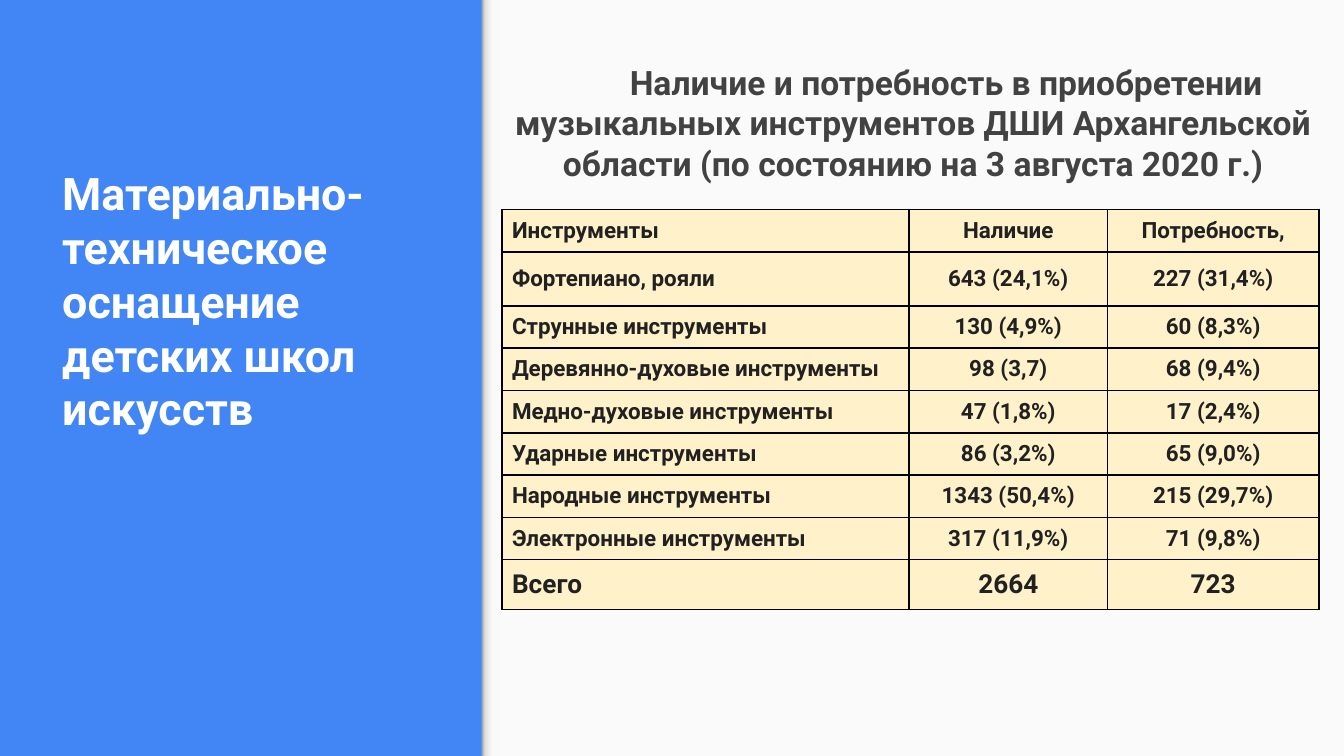
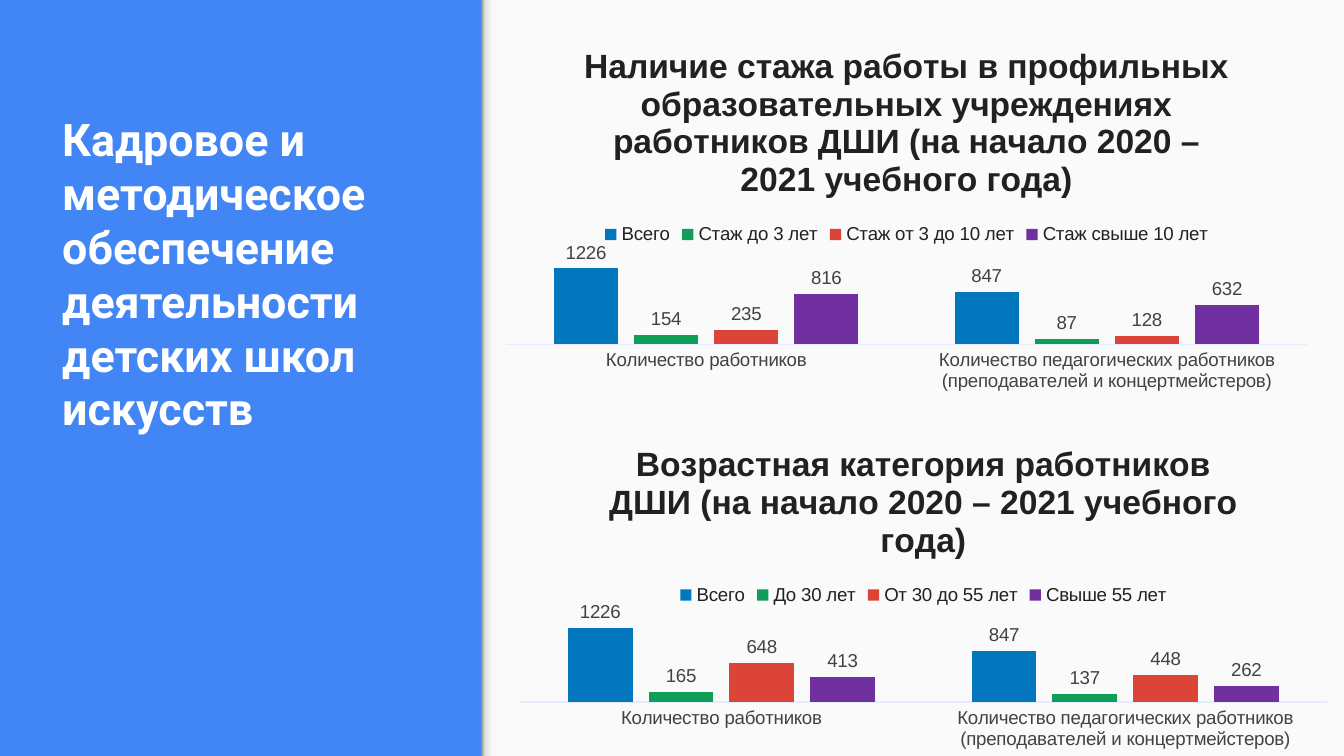
from lxml.etree import SubElement
from pptx import Presentation
from pptx.chart.data import CategoryChartData
from pptx.dml.color import RGBColor
from pptx.enum.chart import XL_CHART_TYPE, XL_LEGEND_POSITION, XL_TICK_MARK
from pptx.enum.shapes import MSO_SHAPE
from pptx.enum.text import MSO_ANCHOR, PP_ALIGN
from pptx.oxml.ns import qn
from pptx.util import Pt

PX = 4572  # EMU in one px, 200 px to the inch
SLIDE_W, SLIDE_H = 2000, 1125
PANEL_LEFT = 717

BLUE = RGBColor(0x42, 0x85, 0xF4)
PAPER = RGBColor(0xFA, 0xFA, 0xFA)
WHITE = RGBColor(0xFF, 0xFF, 0xFF)
BLACK = RGBColor(0x00, 0x00, 0x00)
INK = RGBColor(0x21, 0x21, 0x21)
GREY = RGBColor(0x42, 0x42, 0x42)
CREAM = RGBColor(0xFF, 0xF1, 0xCA)
AXIS = RGBColor(0xE3, 0xED, 0xFD)
SERIES_COLORS = [
    RGBColor(0x02, 0x77, 0xBD),
    RGBColor(0x0F, 0x9D, 0x58),
    RGBColor(0xDB, 0x44, 0x37),
    RGBColor(0x70, 0x30, 0xA0),
]
# Edge shadow, from the blue band into the panel: percent, colour
EDGE_STOPS = [
    (0, RGBColor(0x99, 0x99, 0x99)),
    (20, RGBColor(0xDE, 0xDE, 0xDE)),
    (64, RGBColor(0xF9, 0xF9, 0xF9)),
    (100, RGBColor(0xF9, 0xF9, 0xF9)),
]

# Content: instruments
EQUIPMENT_TITLE = "Материально-техническое оснащение детских школ искусств"
INSTRUMENTS_HEADING = (
    "Наличие и потребность в приобретении музыкальных инструментов ДШИ "
    "Архангельской области (по состоянию на 3 августа 2020 г.)"
)
INSTRUMENTS = [
    ("Инструменты", "Наличие", "Потребность,"),
    ("Фортепиано, рояли", "643 (24,1%)", "227 (31,4%)"),
    ("Струнные инструменты", "130 (4,9%)", "60 (8,3%)"),
    ("Деревянно-духовые инструменты", "98 (3,7)", "68 (9,4%)"),
    ("Медно-духовые инструменты", "47 (1,8%)", "17 (2,4%)"),
    ("Ударные инструменты", "86 (3,2%)", "65 (9,0%)"),
    ("Народные инструменты", "1343 (50,4%)", "215 (29,7%)"),
    ("Электронные инструменты", "317 (11,9%)", "71 (9,8%)"),
    ("Всего", "2664", "723"),
]
COLUMN_WIDTHS = [606, 295, 315]
ROW_HEIGHT = 63
TALL_ROWS = {1: 80, len(INSTRUMENTS) - 1: 74}

# Content: staff
STAFF_TITLE = "Кадровое и методическое обеспечение деятельности детских школ искусств"
STAFF_GROUPS = [
    "Количество работников",
    "Количество педагогических работников (преподавателей и концертмейстеров)",
]
STAFF_CHARTS = [
    {
        "box": (728, 34, 1242, 560),
        "title": "Наличие стажа работы в профильных образовательных учреждениях "
                 "работников ДШИ (на начало 2020 – 2021 учебного года)",
        "series": [
            ("Всего", (1226, 847)),
            ("Стаж до 3 лет", (154, 87)),
            ("Стаж от 3 до 10 лет", (235, 128)),
            ("Стаж свыше 10 лет", (816, 632)),
        ],
    },
    {
        "box": (748, 628, 1252, 497),
        "title": "Возрастная категория работников ДШИ "
                 "(на начало 2020 – 2021 учебного года)",
        "series": [
            ("Всего", (1226, 847)),
            ("До 30 лет", (165, 137)),
            ("От 30 до 55 лет", (648, 448)),
            ("Свыше 55 лет", (413, 262)),
        ],
    },
]


def emu(*lengths):
    return [length * PX for length in lengths]


def apply(target, **values):
    for name, value in values.items():
        setattr(target, name, value)


def style_font(font, size, color, name="Roboto", bold=True):
    apply(font, size=Pt(size), name=name, bold=bold)
    font.color.rgb = color


def add_color(parent, color):
    SubElement(parent, qn("a:srgbClr"), val=str(color))


def add_panel(slide, box):
    panel = slide.shapes.add_shape(MSO_SHAPE.RECTANGLE, *emu(*box))
    panel.shadow.inherit = False
    panel.line.fill.background()
    return panel


def add_text(slide, box, text, size, color, anchor, align, indent=0):
    area = slide.shapes.add_textbox(*emu(*box))
    apply(area.text_frame, word_wrap=True, vertical_anchor=anchor, text=text)
    apply(area.text_frame, **dict.fromkeys(
        ("margin_left", "margin_right"), 20 * PX))
    paragraph = area.text_frame.paragraphs[0]
    paragraph.alignment = align
    style_font(paragraph.runs[0].font, size, color)
    if indent:
        paragraph._p.get_or_add_pPr().set("indent", str(indent * PX))
    return area


def add_section_slide(prs, title):
    """Blue band with a title on the left, pale panel on the right."""
    slide = prs.slides.add_slide(prs.slide_layouts[6])
    slide.background.fill.solid()
    slide.background.fill.fore_color.rgb = BLUE

    panel = add_panel(slide, (PANEL_LEFT, 0, SLIDE_W - PANEL_LEFT, SLIDE_H))
    panel.fill.solid()
    panel.fill.fore_color.rgb = PAPER

    edge = add_panel(slide, (PANEL_LEFT, 0, 24, SLIDE_H))
    edge.fill.gradient()
    edge.fill.gradient_angle = 0
    stops = next(edge._element.iter(qn("a:gsLst")))
    stops.clear()
    for percent, color in EDGE_STOPS:
        add_color(SubElement(stops, qn("a:gs"), pos=str(percent * 1000)), color)

    heading = add_text(slide, (73, 459, 614, 208), title, 24, WHITE,
                       MSO_ANCHOR.BOTTOM, PP_ALIGN.LEFT)
    apply(heading.text_frame, margin_top=20 * PX, margin_bottom=20 * PX)
    return slide


def add_borders(cell):
    properties = cell._tc.get_or_add_tcPr()
    for position, side in enumerate(("lnL", "lnR", "lnT", "lnB")):
        line = SubElement(properties, qn(f"a:{side}"), w=str(Pt(1)))
        add_color(SubElement(line, qn("a:solidFill")), BLACK)
        properties.insert(position, line)


def add_instruments_table(slide):
    heights = [TALL_ROWS.get(i, ROW_HEIGHT) for i in range(len(INSTRUMENTS))]
    box = (747, 312, sum(COLUMN_WIDTHS), sum(heights))
    table = slide.shapes.add_table(
        len(heights), len(COLUMN_WIDTHS), *emu(*box)).table
    apply(table, first_row=False, horz_banding=False)
    for column, width in zip(table.columns, COLUMN_WIDTHS):
        column.width = width * PX
    for row, height in zip(table.rows, heights):
        row.height = height * PX

    for r, values in enumerate(INSTRUMENTS):
        size = 14 if r == len(INSTRUMENTS) - 1 else 12
        for c, value in enumerate(values):
            cell = table.cell(r, c)
            apply(cell, text=value, vertical_anchor=MSO_ANCHOR.MIDDLE,
                  margin_left=15 * PX, margin_right=15 * PX,
                  margin_top=0, margin_bottom=0)
            cell.fill.solid()
            cell.fill.fore_color.rgb = CREAM
            add_borders(cell)
            paragraph = cell.text_frame.paragraphs[0]
            paragraph.alignment = PP_ALIGN.CENTER if c else PP_ALIGN.LEFT
            style_font(paragraph.runs[0].font, size, INK)


def add_staff_chart(slide, box, title, series):
    data = CategoryChartData()
    data.categories = STAFF_GROUPS
    for name, values in series:
        data.add_series(name, values)
    chart = slide.shapes.add_chart(
        XL_CHART_TYPE.COLUMN_CLUSTERED, *emu(*box), data).chart
    style_font(chart.font, 10, GREY, "Arial", False)

    # Title and legend
    heading = chart.chart_title
    heading.text_frame.text = title
    heading.include_in_layout = False
    heading.format.fill.background()
    heading.format.line.fill.background()
    style_font(heading.text_frame.paragraphs[0].runs[0].font, 18, INK, "Arial")
    chart.has_legend = True
    apply(chart.legend, position=XL_LEGEND_POSITION.TOP, include_in_layout=False)
    style_font(chart.legend.font, 10, INK, "Arial", False)

    # Axes
    apply(chart.value_axis, visible=False, has_major_gridlines=False,
          minimum_scale=0)
    apply(chart.category_axis, major_tick_mark=XL_TICK_MARK.NONE,
          minor_tick_mark=XL_TICK_MARK.NONE)
    axis_line = chart.category_axis.format.line
    axis_line.width = Pt(0.75)
    axis_line.color.rgb = AXIS

    # Columns
    plot = chart.plots[0]
    apply(plot, gap_width=150, overlap=-25, vary_by_categories=False,
          has_data_labels=True)
    plot.data_labels.show_value = True
    style_font(plot.data_labels.font, 10, GREY, "Arial", False)
    for columns, color in zip(plot.series, SERIES_COLORS):
        columns.format.fill.solid()
        columns.format.fill.fore_color.rgb = color


def main():
    prs = Presentation()
    prs.slide_width, prs.slide_height = emu(SLIDE_W, SLIDE_H)

    equipment = add_section_slide(prs, EQUIPMENT_TITLE)
    add_instruments_table(equipment)
    add_text(equipment, (726, 81, 1266, 202), INSTRUMENTS_HEADING, 18, GREY,
             MSO_ANCHOR.MIDDLE, PP_ALIGN.CENTER, indent=98)

    staff = add_section_slide(prs, STAFF_TITLE)
    for staff_chart in STAFF_CHARTS:
        add_staff_chart(staff, **staff_chart)

    prs.save("out.pptx")


if __name__ == "__main__":
    main()
